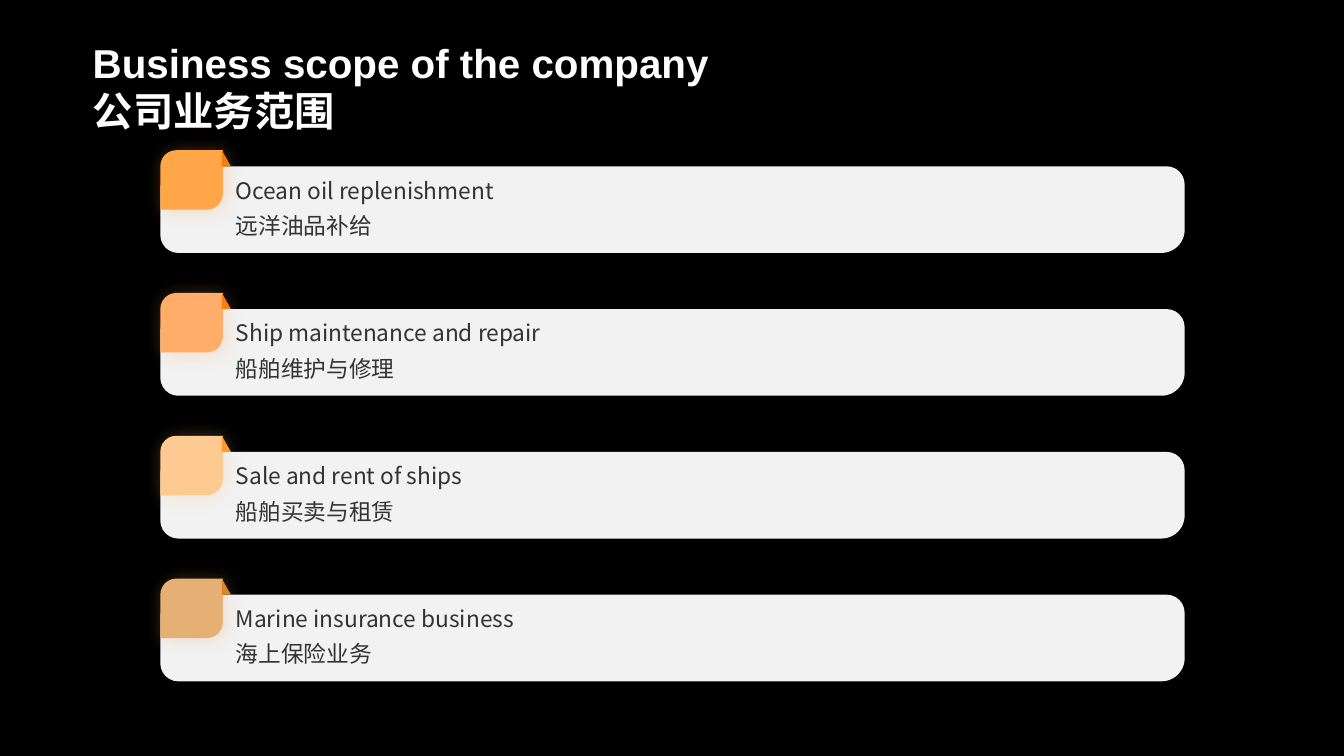
from lxml.etree import SubElement
from pptx import Presentation
from pptx.dml.color import RGBColor
from pptx.enum.shapes import MSO_SHAPE
from pptx.enum.text import MSO_ANCHOR
from pptx.oxml.ns import qn
from pptx.util import Inches, Pt

# Content
TITLE = ["Business scope of the company", "公司业务范围"]
SERVICES = [  # English, Chinese, tab colour, fold colour
    ("Ocean oil replenishment", "远洋油品补给", "FFA649", "F67E00"),
    ("Ship maintenance and repair", "船舶维护与修理", "FFAD69", "FF7C0F"),
    ("Sale and rent of ships", "船舶买卖与租赁", "FFCA92", "FF992E"),
    ("Marine insurance business", "海上保险业务", "E6B074", "D9862B"),
]
THEME = {
    "background": "000000", "title": "FFFFFF", "bar": "F2F2F2", "text": "333333",
    "bar_shadow": ("000000", 23, 20, 3, 107),  # colour, opacity %, blur, distance, angle
    "tab_shadow": (31, 13, 2, 45),
    "title_size": 28.8, "text_size": 16.2,
    "title_font": "Arial", "text_font": "Noto Sans CJK SC",
}

# Layout in inches
LEFT, FIRST_TOP, LAST_TOP = 1.59, 1.65, 5.9
PITCH = (LAST_TOP - FIRST_TOP) / (len(SERVICES) - 1)
BAR_WIDTH, BAR_HEIGHT = 10.16, 0.86
TAB_WIDTH, TAB_HEIGHT = 0.62, 0.59
FOLD_WIDTH, FOLD_HEIGHT = 0.09, 0.16

prs = Presentation()
prs.slide_width, prs.slide_height = Inches(13.33), Inches(7.5)
slide = prs.slides.add_slide(prs.slide_layouts[6])
slide.background.fill.solid()
slide.background.fill.fore_color.rgb = RGBColor.from_string(THEME["background"])


def add_panel(kind, box, color, adjustments=(), shadow=None):
    panel = slide.shapes.add_shape(kind, *map(Inches, box))
    for i, value in enumerate(adjustments):
        panel.adjustments[i] = value
    panel.fill.solid()
    panel.fill.fore_color.rgb = RGBColor.from_string(color)
    panel.line.fill.background()
    panel.shadow.inherit = False
    if shadow:
        tint, opacity, blur, distance, angle = shadow
        effects = panel._element.spPr.find(qn("a:effectLst"))
        outer = SubElement(effects, qn("a:outerShdw"), blurRad=str(Pt(blur)),
                           dist=str(Pt(distance)), dir=str(angle * 60000),
                           algn="ctr", rotWithShape="0")
        shade = SubElement(outer, qn("a:srgbClr"), val=tint)
        SubElement(shade, qn("a:alpha"), val=str(opacity * 1000))


def add_text_frame(box, margins):
    frame = slide.shapes.add_textbox(*map(Inches, box)).text_frame
    frame.word_wrap = True
    frame.vertical_anchor = MSO_ANCHOR.MIDDLE
    (frame.margin_left, frame.margin_top,
     frame.margin_right, frame.margin_bottom) = map(Inches, margins)
    return frame


def add_run(paragraph, text, role, bold=False):
    run = paragraph.add_run()
    run.text = text
    run.font.size = Pt(THEME[role + "_size"])
    run.font.bold = bold
    run.font.color.rgb = RGBColor.from_string(THEME[role])
    run.font.name = THEME[role + "_font"]
    SubElement(run.font._element, qn("a:ea"), typeface=THEME["text_font"])


# Title
heading = add_text_frame((0.92, 0.39, 11.5, 0.94), (0, 0, 0, 0)).paragraphs[0]
heading.line_spacing = 1.0
for i, line in enumerate(TITLE):
    if i:
        heading.add_line_break()
    add_run(heading, line, "title", bold=True)

# Service rows: bar, tab, fold and bilingual label
for row, (english, chinese, tab_color, fold_color) in enumerate(SERVICES):
    top = FIRST_TOP + row * PITCH
    tab_top = top - FOLD_HEIGHT
    add_panel(MSO_SHAPE.ROUND_2_DIAG_RECTANGLE, (LEFT, top, BAR_WIDTH, BAR_HEIGHT),
              THEME["bar"], (0.267, 0.208), THEME["bar_shadow"])
    add_panel(MSO_SHAPE.ROUND_2_DIAG_RECTANGLE, (LEFT, tab_top, TAB_WIDTH, TAB_HEIGHT),
              tab_color, (0.267, 0), (tab_color, *THEME["tab_shadow"]))
    add_panel(MSO_SHAPE.RIGHT_TRIANGLE,
              (LEFT + TAB_WIDTH - 0.01, tab_top, FOLD_WIDTH, FOLD_HEIGHT), fold_color)
    label = add_text_frame((2.24, top + 0.01, 9.18, 0.84), (0.1, 0, 0.1, 0.12))
    for i, line in enumerate((english, chinese)):
        paragraph = label.add_paragraph() if i else label.paragraphs[0]
        paragraph.line_spacing = 1.3
        add_run(paragraph, line, "text")

prs.save("out.pptx")
